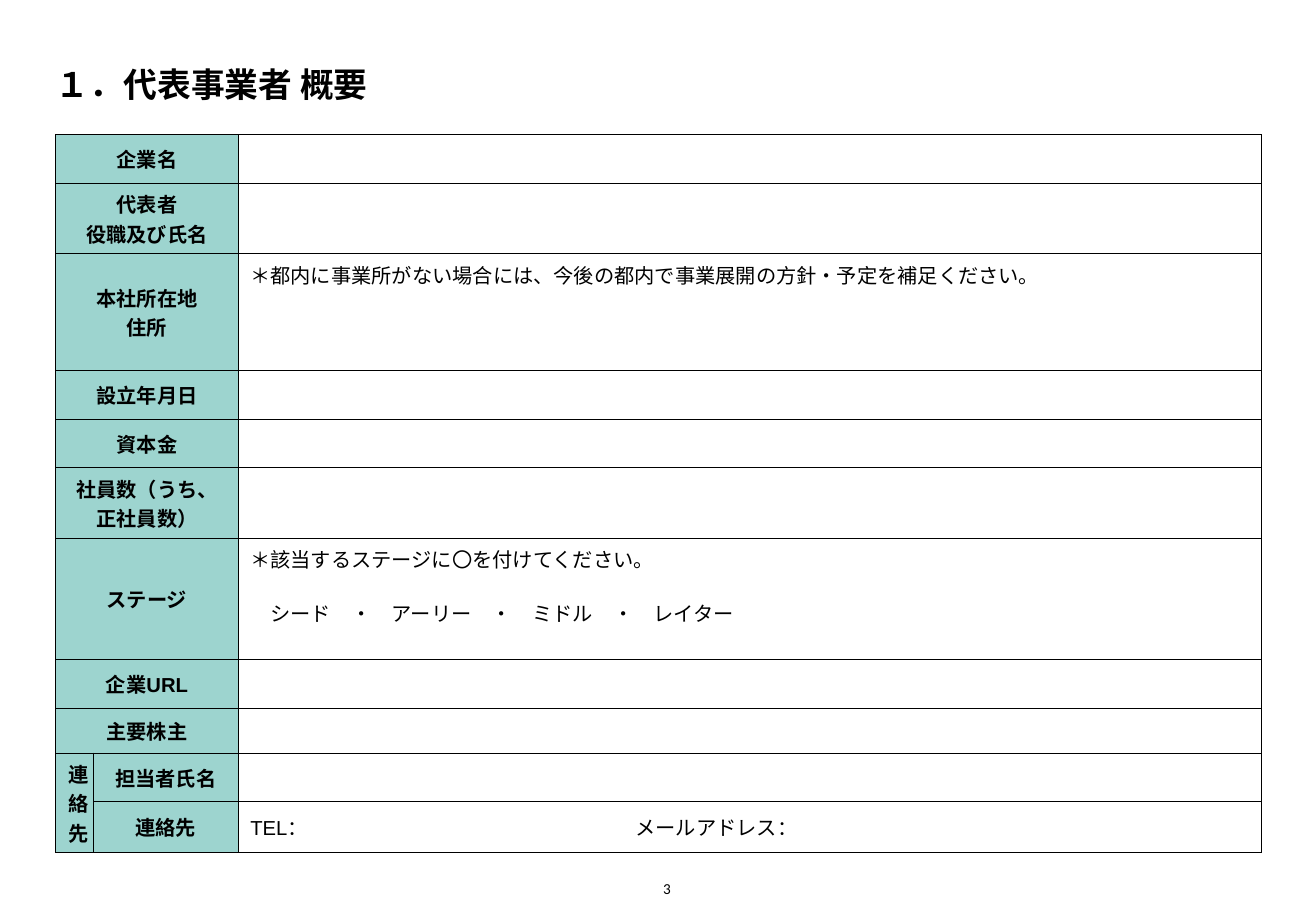
import pptx
import pptx.util
import pptx.dml.color
import pptx.enum.text
import pptx.oxml
import pptx.oxml.ns

Inches = pptx.util.Inches
Pt = pptx.util.Pt
ALIGN = pptx.enum.text.PP_ALIGN
ANCHOR = pptx.enum.text.MSO_ANCHOR
BLACK = pptx.dml.color.RGBColor(0x00, 0x00, 0x00)
WHITE = pptx.dml.color.RGBColor(0xFF, 0xFF, 0xFF)
TEAL = pptx.dml.color.RGBColor(0x9D, 0xD4, 0xCF)

TITLE = "１．代表事業者 概要"
PAGE = "3"
COLS = [0.31, 1.19, 8.42]
ROWS = [
    (0.4, ["企業名"], []),
    (0.58, ["代表者", "役職及び氏名"], []),
    (0.96, ["本社所在地", "住所"],
     ["＊都内に事業所がない場合には、今後の都内で事業展開の方針・予定を補足ください。"]),
    (0.4, ["設立年月日"], []),
    (0.4, ["資本金"], []),
    (0.58, ["社員数（うち、正社員数）"], []),
    (1.0, ["ステージ"],
     ["＊該当するステージに〇を付けてください。",
      "　シード　・　アーリー　・　ミドル　・　レイター"]),
    (0.4, ["企業URL"], []),
    (0.37, ["主要株主"], []),
    (0.4, ["担当者氏名"], []),
    (0.42, ["連絡先"], ["TEL：\tメールアドレス："]),
]
CONTACT = ["連絡先"]
CONTACT_ROW = 9
MAIL_TAB = 3.17
NOTE_GAP = 14.5
LEFT, TOP, WIDTH = 0.46, 1.11, sum(COLS)


def add_run(p, text, size, font, bold=False):
    r = p.add_run()
    r.text = text
    r.font.size = Pt(size)
    r.font.name = font
    r.font.bold = bold
    r.font.color.rgb = BLACK


def add_text(slide, box, text, size, align, bold=False, wrap=True):
    tf = slide.shapes.add_textbox(*[Inches(v) for v in box]).text_frame
    tf.word_wrap = wrap
    tf.vertical_anchor = ANCHOR.BOTTOM
    tf.margin_left = tf.margin_right = tf.margin_top = tf.margin_bottom = 0
    p = tf.paragraphs[0]
    p.alignment = align
    add_run(p, text, size, "Calibri", bold)


def add_borders(cell):
    tcPr = cell._tc.get_or_add_tcPr()
    for i, side in enumerate(("lnL", "lnR", "lnT", "lnB")):
        tcPr.insert(i, pptx.oxml.parse_xml(
            f'<a:{side} {pptx.oxml.ns.nsdecls("a")} w="6350"><a:solidFill>'
            f'<a:srgbClr val="{BLACK}"/></a:solidFill></a:{side}>'))


def add_tab(p, pos):
    p._p.get_or_add_pPr().append(pptx.oxml.parse_xml(
        f'<a:tabLst {pptx.oxml.ns.nsdecls("a")}>'
        f'<a:tab pos="{Inches(pos)}" algn="l"/></a:tabLst>'))


def fill_cell(cell, lines, align, anchor, bold=False, gap=0):
    cell.vertical_anchor = anchor
    tf = cell.text_frame
    tf.paragraphs[0]._p.get_or_add_endParaRPr().set("sz", "1200")
    for i, line in enumerate(lines):
        p = tf.add_paragraph() if i else tf.paragraphs[0]
        p.alignment = align
        if i and gap:
            p.space_before = Pt(gap)
        if "\t" in line:
            add_tab(p, MAIL_TAB)
        add_run(p, line, 12, "Arial", bold)


def add_profile_table(slide):
    height = sum(row[0] for row in ROWS)
    table = slide.shapes.add_table(
        len(ROWS), len(COLS), Inches(LEFT), Inches(TOP),
        Inches(WIDTH), Inches(height)).table
    table.first_row = table.horz_banding = False
    for col, width in zip(table.columns, COLS):
        col.width = Inches(width)
    for i, (row_height, label, note) in enumerate(ROWS):
        table.rows[i].height = Inches(row_height)
        for j in range(len(COLS)):
            cell = table.cell(i, j)
            cell.fill.solid()
            cell.fill.fore_color.rgb = TEAL if j < 2 else WHITE
            add_borders(cell)
        if i < CONTACT_ROW:
            table.cell(i, 0).merge(table.cell(i, 1))
        label_cell = table.cell(i, 0 if i < CONTACT_ROW else 1)
        fill_cell(label_cell, label, ALIGN.CENTER, ANCHOR.MIDDLE, True)
        anchor = ANCHOR.TOP if i < CONTACT_ROW else ANCHOR.MIDDLE
        fill_cell(table.cell(i, 2), note, ALIGN.LEFT, anchor, gap=NOTE_GAP)
    contact = table.cell(CONTACT_ROW, 0)
    contact.merge(table.cell(CONTACT_ROW + 1, 0))
    fill_cell(contact, CONTACT, ALIGN.CENTER, ANCHOR.MIDDLE, True)


def main():
    prs = pptx.Presentation()
    prs.slide_width, prs.slide_height = Inches(10.83), Inches(7.5)
    s = prs.slides.add_slide(prs.slide_layouts[6])
    add_text(s, (5.32, 7.2, 0.2, 0.19), PAGE, 9, ALIGN.RIGHT, wrap=False)
    add_text(s, (LEFT, 0.15, WIDTH, 0.71), TITLE, 20, ALIGN.LEFT, True)
    add_profile_table(s)
    prs.save("out.pptx")


if __name__ == "__main__":
    main()
